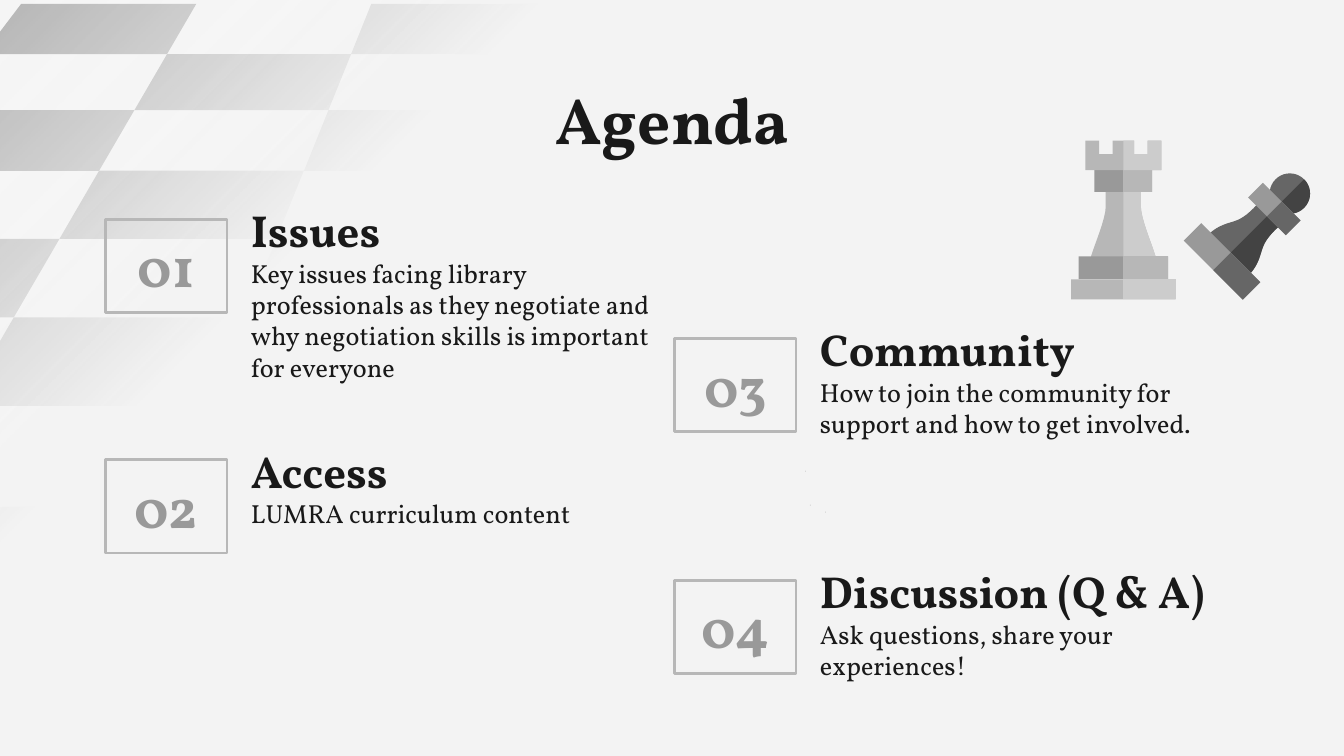
from math import cos, sin, radians

from lxml import etree
from pptx import Presentation
from pptx.dml.color import RGBColor
from pptx.enum import shapes, text
from pptx import util as u

FONT = "Vollkorn"
INK = "191919"
GRAY = "999999"
NS = "http://schemas.openxmlformats.org/drawingml/2006/main"
ROWS = [2, 29, 59, 91.5, 128, 170, 217.5, 271.5, 334, 407.5]
FADE = [(0, "FFFFFF", 0), (32, "F3F3F3", 100), (100, "F3F3F3", 100)]
SPECKS = [(431.3, 252.2), (433.9, 270.4), (442, 274.1)]
ITEMS = [
    (56.6, 117.5, "01", "Issues",
     "Key issues facing library professionals as they negotiate and "
     "why negotiation skills is important for everyone"),
    (56.6, 246.3, "02", "Access", "LUMRA curriculum content"),
    (361.5, 181.3, "03", "Community",
     "How to join the community for support and how to get involved."),
    (361.5, 310.9, "04", "Discussion (Q & A)",
     "Ask questions, share your experiences!"),
]


def color(code):
    """Turn a hex string into a colour."""
    return RGBColor.from_string(code)


def block(wide, top, low):
    """Return the right half of a plain bar of a chess piece."""
    return [(0, top), (wide, top), (wide, low), (0, low)]


# Right halves as (points, full colour, half colour); six numbers are a curve.
ROOK = [
    ([(0, 26), (9.4, 26), (9.4, 35.3), (9.4, 43.2, 18, 61.2, 18, 65.5),
      (0, 65.5)], "B7B7B7", "CCCCCC"),
    (block(24, 61.9, 74.2), GRAY, "B7B7B7"),
    (block(28, 74.2, 85), "B7B7B7", "CCCCCC"),
    (block(15.5, 14.4, 27.4), GRAY, "B7B7B7"),
    ([(0, 0), (5.8, 0), (5.8, 7.2), (13, 7.2), (13, 0), (20.4, 0),
      (20.4, 15.8), (0, 15.8)], "B7B7B7", "CCCCCC"),
]
PAWN = [
    ([(0, -10.8), (6, -10.8, 10.8, -6, 10.8, 0),
      (10.8, 6, 6, 10.8, 0, 10.8)], "666666", "434343"),
    ([(0, 11.7), (8.6, 11.7), (8.2, 19.3), (8.2, 29.5, 10.7, 31, 13.2, 36.7),
      (14.8, 40.2, 15.3, 43.8, 15.3, 45.8), (0, 45.8)], "666666", "434343"),
    (block(14.3, 6.1, 17.3), GRAY, "666666"),
    (block(22.4, 44.8, 58), GRAY, "666666"),
]


def flatten(path, steps=10):
    """Turn a path with curves into plain points."""
    dots = []
    for part in path:
        if len(part) == 2:
            dots.append(part)
            continue
        ends = [dots[-1], part[:2], part[2:4], part[4:]]
        for i in range(1, steps + 1):
            t = i / steps
            mix = [(1 - t) ** 3, 3 * t * (1 - t) ** 2,
                   3 * t * t * (1 - t), t ** 3]
            dots.append(tuple(sum(m * e[k] for m, e in zip(mix, ends))
                              for k in (0, 1)))
    return dots


def outline(slide, dots, fill):
    """Draw a closed filled outline."""
    spots = [(u.Pt(x), u.Pt(y)) for x, y in dots]
    form = slide.shapes.build_freeform(*spots[0])
    form.add_line_segments(spots[1:], close=True)
    shape = form.convert_to_shape()
    shape.shadow.inherit = False
    shape.fill.solid()
    shape.fill.fore_color.rgb = color(fill)
    shape.line.fill.background()


def piece(slide, parts, left, top, turn=0):
    """Draw a chess piece from its right halves, turned about its origin."""
    c, s = cos(radians(turn)), sin(radians(turn))
    for path, full, side in parts:
        half = flatten(path)
        both = half + [(-x, y) for x, y in reversed(half)]
        for dots, fill in ((both, full), (half, side)):
            outline(slide, [(left + x * c - y * s, top + x * s + y * c)
                            for x, y in dots], fill)


def edge(col, y):
    """Return where a board line crosses a height."""
    drop = y - 2
    return 386.6 - 0.048 * drop + (col - 4) * (93.8 + 0.178 * drop)


def board(slide):
    """Draw the dark tiles of a chessboard in perspective."""
    for row, (top, low) in enumerate(zip(ROWS, ROWS[1:])):
        for col in range(row % 2, 8, 2):
            if edge(col + 1, top) > 0 and edge(col, top) < 720:
                outline(slide, [(edge(col, top), top), (edge(col, low), low),
                                (edge(col + 1, low), low),
                                (edge(col + 1, top), top)], GRAY)


def veil(slide):
    """Lay a radial fade over the board."""
    shape = slide.shapes.add_shape(
        shapes.MSO_SHAPE.RECTANGLE, u.Pt(-60), u.Pt(-54), u.Pt(795), u.Pt(472))
    shape.shadow.inherit = False
    shape.line.color.rgb = color("CCCCCC")
    shape.line.width = u.Pt(0.75)
    shape.fill.solid()
    stops = "".join(
        f'<a:gs pos="{pos * 1000}"><a:srgbClr val="{code}">'
        f'<a:alpha val="{solid * 1000}"/></a:srgbClr></a:gs>'
        for pos, code, solid in FADE)
    grad = etree.fromstring(
        f'<a:gradFill xmlns:a="{NS}"><a:gsLst>{stops}</a:gsLst>'
        '<a:path path="circle"><a:fillToRect r="100000" b="100000"/></a:path>'
        '</a:gradFill>')
    props = shape._element.spPr
    props.replace(props.find(f"{{{NS}}}solidFill"), grad)


def speck(slide, x, y):
    """Draw a tiny dot."""
    dot = slide.shapes.add_shape(
        shapes.MSO_SHAPE.OVAL, u.Pt(x), u.Pt(y), u.Pt(0.5), u.Pt(0.5))
    dot.shadow.inherit = False
    dot.fill.solid()
    dot.fill.fore_color.rgb = color("CCCCCC")
    dot.line.fill.background()


def write(shape, words, size, ink=INK, bold=True, mid=False, low=False):
    """Set the text of a shape."""
    frame = shape.text_frame
    frame.word_wrap = True
    frame.margin_left = frame.margin_right = u.Pt(7.2)
    frame.margin_top = frame.margin_bottom = u.Pt(7.2)
    frame.vertical_anchor = (text.MSO_ANCHOR.BOTTOM if low
                             else text.MSO_ANCHOR.TOP)
    para = frame.paragraphs[0]
    para.text = words
    para.alignment = text.PP_ALIGN.CENTER if mid else text.PP_ALIGN.LEFT
    para.font.name = FONT
    para.font.size = u.Pt(size)
    para.font.bold = bold
    para.font.color.rgb = color(ink)


def label(slide, x, y, wide, high, words, size, **style):
    """Add a text box."""
    box = slide.shapes.add_textbox(u.Pt(x), u.Pt(y), u.Pt(wide), u.Pt(high))
    write(box, words, size, **style)


def item(slide, x, y, num, head, body):
    """Add a numbered agenda item."""
    box = slide.shapes.add_shape(
        shapes.MSO_SHAPE.RECTANGLE, u.Pt(x), u.Pt(y), u.Pt(65), u.Pt(50))
    box.shadow.inherit = False
    box.fill.background()
    box.line.color.rgb = color("B7B7B7")
    box.line.width = u.Pt(1.5)
    write(box, num, 30, ink=GRAY, mid=True, low=True)
    label(slide, x + 70.7, y - 1.8, 245, 29, head, 24, low=True)
    label(slide, x + 70.7, y + 13, 245, 38, body, 14, bold=False)


def main():
    """Build the agenda slide."""
    deck = Presentation()
    deck.slide_width, deck.slide_height = u.Pt(720), u.Pt(405)
    slide = deck.slides.add_slide(deck.slide_layouts[6])
    slide.background.fill.solid()
    slide.background.fill.fore_color.rgb = color("F3F3F3")
    board(slide)
    veil(slide)
    for spot in SPECKS:
        speck(slide, *spot)
    label(slide, 56.6, 35, 607, 45, "Agenda", 35, mid=True)
    for entry in ITEMS:
        item(slide, *entry)
    piece(slide, PAWN, 691, 103.7, turn=45)
    piece(slide, ROOK, 601.8, 75.4)
    deck.save("out.pptx")


if __name__ == "__main__":
    main()
